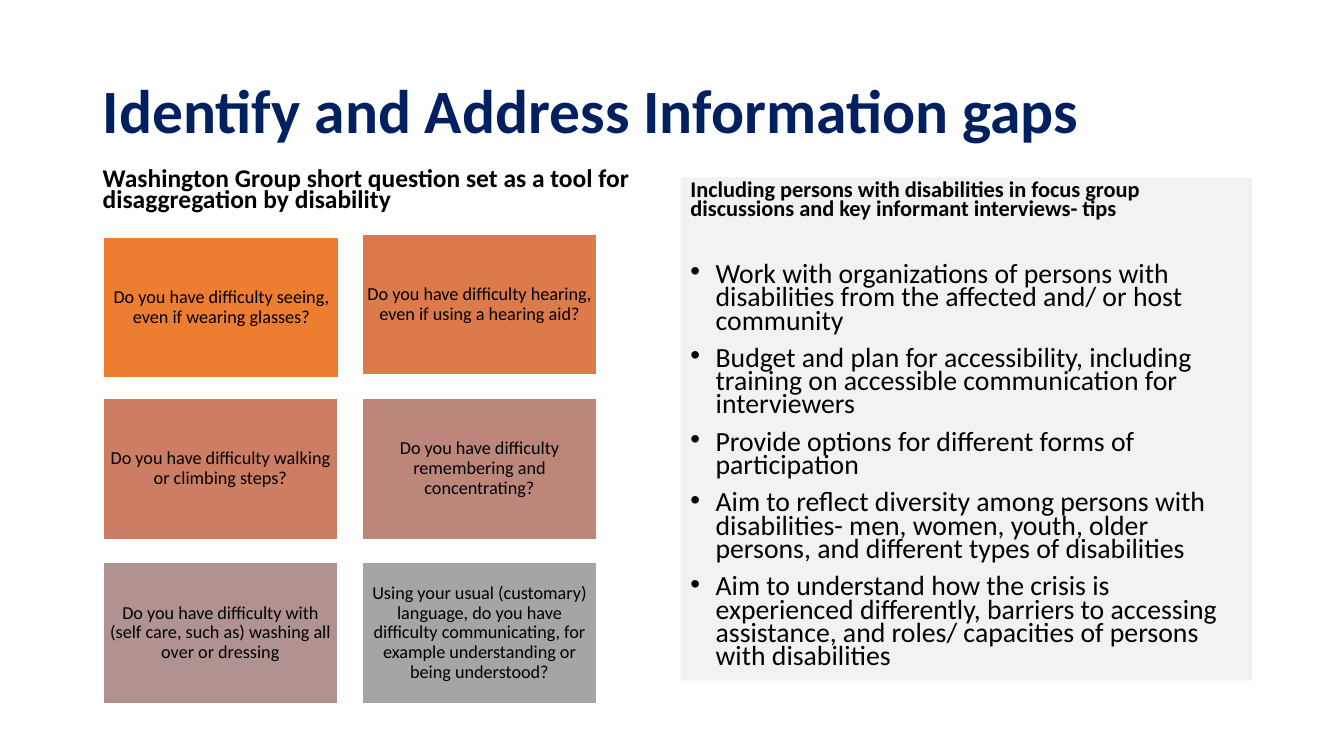
from pptx import Presentation
from pptx.dml.color import RGBColor
from pptx.enum.shapes import MSO_SHAPE
from pptx.enum.text import MSO_ANCHOR, MSO_AUTO_SIZE, PP_ALIGN
from pptx.oxml.ns import qn
from pptx.util import Inches, Pt
from lxml import etree

RECT = MSO_SHAPE.RECTANGLE
TOP, MIDDLE = MSO_ANCHOR.TOP, MSO_ANCHOR.MIDDLE
LEFT, CENTER = PP_ALIGN.LEFT, PP_ALIGN.CENTER
NO_AUTOFIT = MSO_AUTO_SIZE.NONE

WHITE = RGBColor(0xFF, 0xFF, 0xFF)
BLACK = RGBColor(0x00, 0x00, 0x00)
NAVY = RGBColor(0x00, 0x20, 0x60)
PANEL = RGBColor(0xF2, 0xF2, 0xF2)

QUESTIONS = [
    ("Do you have difficulty seeing, even if wearing glasses?",
     RGBColor(0xED, 0x7D, 0x31), 1.03, 2.35),
    ("Do you have difficulty hearing, even if using a hearing aid?",
     RGBColor(0xDC, 0x7A, 0x4B), 3.59, 2.32),
    ("Do you have difficulty walking or climbing steps?",
     RGBColor(0xCC, 0x7D, 0x64), 1.02, 3.95),
    ("Do you have difficulty remembering and concentrating?",
     RGBColor(0xBD, 0x86, 0x7B), 3.59, 3.95),
    ("Do you have difficulty with (self care, such as) washing all over or dressing",
     RGBColor(0xB0, 0x93, 0x91), 1.02, 5.58),
    ("Using your usual (customary) language, do you have difficulty "
     "communicating, for example understanding or being understood?",
     RGBColor(0xA5, 0xA5, 0xA5), 3.59, 5.58),
]
TIPS = [
    "Work with organizations of persons with disabilities from the affected "
    "and/ or host community",
    "Budget and plan for accessibility, including training on accessible "
    "communication for interviewers",
    "Provide options for different forms of participation",
    "Aim to reflect diversity among persons with disabilities- men, women, "
    "youth, older persons, and different types of disabilities",
    "Aim to understand how the crisis is experienced differently, barriers to "
    "accessing assistance, and roles/ capacities of persons with disabilities",
]


def write(p, text, size, color=BLACK, bold=False, align=LEFT, spacing=0.7,
          before=10, bullet=False):
    p.alignment = align
    p.line_spacing = spacing
    p.space_before = Pt(before)
    r = p.add_run()
    r.text = text
    r.font.name = "Calibri"
    r.font.size = Pt(size)
    r.font.bold = bold
    r.font.color.rgb = color
    if bullet:
        pPr = p._p.get_or_add_pPr()
        pPr.set("marL", str(Inches(0.25)))
        pPr.set("indent", str(Inches(-0.25)))
        etree.SubElement(pPr, qn("a:buFont")).set("typeface", "Arial")
        etree.SubElement(pPr, qn("a:buChar")).set("char", "•")


def add_box(left, top, width, height, fill):
    sp = s.shapes.add_shape(RECT, Inches(left), Inches(top), Inches(width), Inches(height))
    sp.shadow.inherit = False
    sp.fill.solid()
    sp.fill.fore_color.rgb = fill
    sp.line.fill.background()
    sp.text_frame.word_wrap = True
    return sp


prs = Presentation()
prs.slide_width = Inches(13.33)
prs.slide_height = Inches(7.5)
s = prs.slides.add_slide(prs.slide_layouts[5])

# Title
title = s.shapes.title
title.left, title.top = Inches(0.92), Inches(0.4)
title.width, title.height = Inches(11.5), Inches(1.45)
tf = title.text_frame
tf.auto_size = NO_AUTOFIT
tf.vertical_anchor = MIDDLE
write(tf.paragraphs[0], "Identify and Address Information gaps", 44, color=NAVY,
      bold=True, spacing=0.9, before=0)

# Heading over the questions
heading = s.shapes.add_textbox(Inches(0.92), Inches(1.64), Inches(5.67), Inches(0.6))
tf = heading.text_frame
tf.word_wrap = True
write(tf.paragraphs[0],
      "Washington Group short question set as a tool for disaggregation by disability",
      18.2, bold=True)

# Panel with interview tips
tf = add_box(6.75, 1.76, 5.67, 4.99, PANEL).text_frame
tf.vertical_anchor = TOP
write(tf.paragraphs[0],
      "Including persons with disabilities in focus group discussions and key "
      "informant interviews- tips", 16, bold=True)
for i, tip in enumerate(TIPS):
    write(tf.add_paragraph(), tip, 19.8, before=10 if i else 32, bullet=True)

# Question tiles
for text, fill, left, top in QUESTIONS:
    sp = add_box(left, top, 2.33, 1.4, fill)
    sp.line.color.rgb = WHITE
    sp.line.width = Pt(1)
    tf = sp.text_frame
    tf.margin_left = tf.margin_right = tf.margin_top = tf.margin_bottom = Inches(0.05)
    tf.vertical_anchor = MIDDLE
    write(tf.paragraphs[0], text, 13, align=CENTER, spacing=0.9, before=0)

prs.save("out.pptx")
